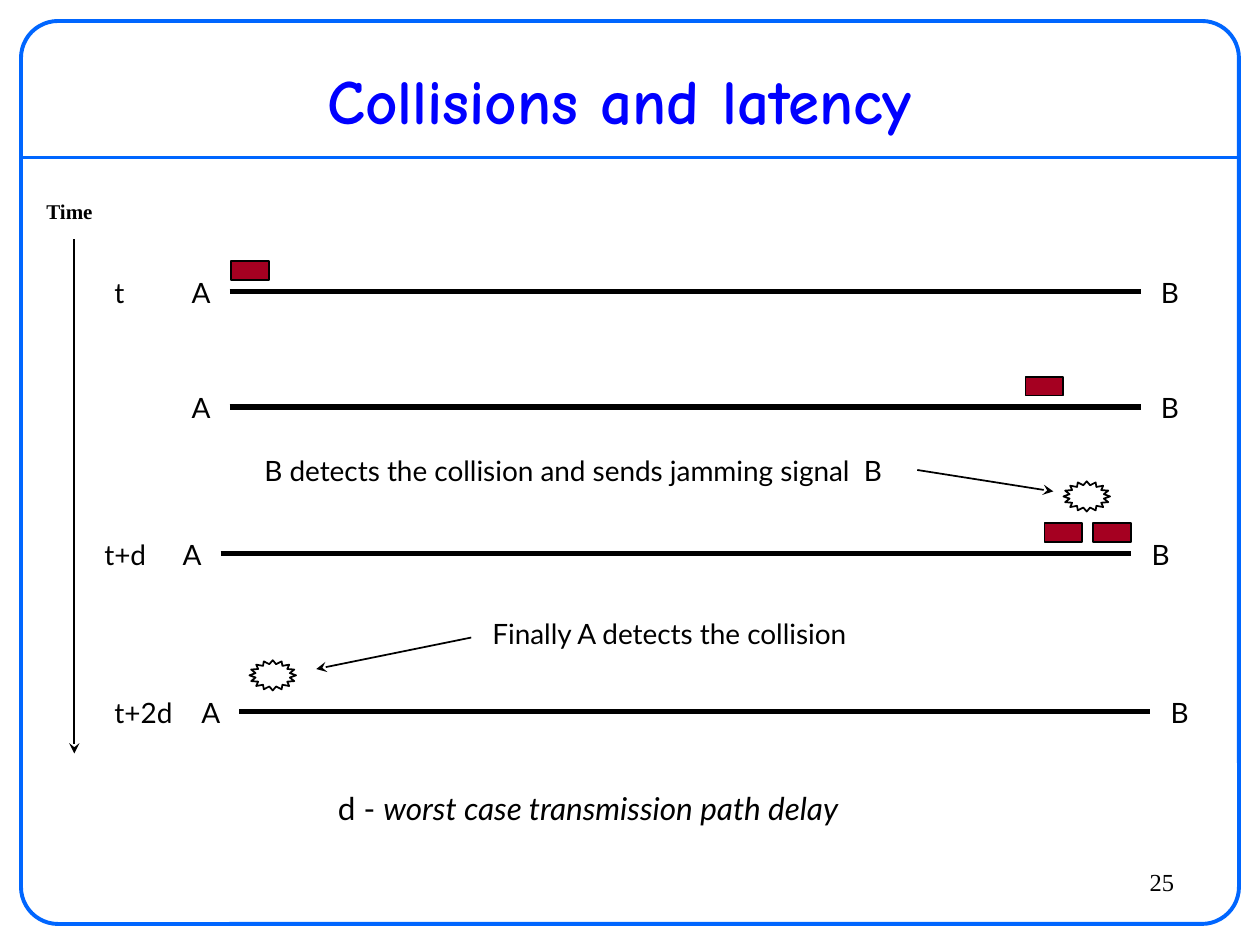
"""Build the slide on collisions and latency over a shared line."""
import pptx
import pptx.dml.color
import pptx.enum.shapes
import pptx.enum.text
import pptx.util
import lxml.etree

BLACK = pptx.dml.color.RGBColor(0x00, 0x00, 0x00)
BLUE = pptx.dml.color.RGBColor(0x00, 0x00, 0xFF)
SKY = pptx.dml.color.RGBColor(0x00, 0x66, 0xFF)
RED = pptx.dml.color.RGBColor(0xA5, 0x00, 0x21)
KIND = pptx.enum.shapes.MSO_SHAPE
ALIGN = pptx.enum.text.PP_ALIGN
MIDDLE = pptx.enum.text.MSO_ANCHOR.MIDDLE
GROW = pptx.enum.text.MSO_AUTO_SIZE.SHAPE_TO_FIT_TEXT

deck = pptx.Presentation()
deck.slide_width = pptx.util.Inches(10)
deck.slide_height = pptx.util.Inches(7.5)
COL = deck.slide_width / 120
ROW = deck.slide_height / 90
page = deck.slides.add_slide(deck.slide_layouts[6])

BODY = {"name": "Lato", "size": pptx.util.Pt(16)}
LABEL = {"word_wrap": False, "auto_size": GROW}
NOTE = {"word_wrap": True, "auto_size": GROW}
PLAIN = {"word_wrap": True}


def write(home, spot, parts, font=BODY, frame=LABEL, para={"line_spacing": 0.9}, ink=BLACK):
    left, top, wide, high = spot
    box = home.add_textbox(int(left * COL), int(top * ROW), int(wide * COL), int(high * ROW))
    for key, value in frame.items():
        setattr(box.text_frame, key, value)
    first = box.text_frame.paragraphs[0]
    for key, value in para.items():
        setattr(first, key, value)
    for words, extra in parts:
        run = first.add_run()
        run.text = words
        run.font.color.rgb = ink
        for key, value in {**font, **extra}.items():
            setattr(run.font, key, value)


def draw(home, start, end, ink=BLACK, width=1, tip=False):
    line = home.add_connector(
        pptx.enum.shapes.MSO_CONNECTOR.STRAIGHT,
        int(start[0] * COL), int(start[1] * ROW), int(end[0] * COL), int(end[1] * ROW))
    line.line.color.rgb = ink
    line.line.width = pptx.util.Pt(width)
    if tip:
        mark = lxml.etree.SubElement(line.line._get_or_add_ln(), pptx.oxml.ns.qn("a:tailEnd"))
        mark.set("type", "stealth")
    lxml.etree.SubElement(line._element.spPr, pptx.oxml.ns.qn("a:effectLst"))


draw(page.shapes, (2, 15), (118, 15), SKY, 2.25)

FRAME = {"kind": KIND.ROUNDED_RECTANGLE, "size": (116, 86), "ink": SKY, "width": 2.25, "bend": 0.041}
PACKET = {"kind": KIND.RECTANGLE, "size": (3.6, 1.8), "ink": BLACK, "width": 1, "fill": RED}
CRASH = {"kind": KIND.STAR_16_POINT, "size": (4.44, 2.88), "ink": BLACK, "width": 1, "bend": 0.375}
for form, left, top in [
    (FRAME, 2, 2),
    (PACKET, 22, 24.84),
    (PACKET, 97.68, 35.88),
    (PACKET, 99.48, 49.8),
    (PACKET, 104.1, 49.8),
    (CRASH, 101.28, 45.84),
    (CRASH, 23.76, 62.88),
]:
    wide, high = form["size"]
    shape = page.shapes.add_shape(
        form["kind"], int(left * COL), int(top * ROW), int(wide * COL), int(high * ROW))
    shape.shadow.inherit = False
    shape.line.color.rgb = form["ink"]
    shape.line.width = pptx.util.Pt(form["width"])
    if "bend" in form:
        shape.adjustments[0] = form["bend"]
    if "fill" in form:
        shape.fill.solid()
        shape.fill.fore_color.rgb = form["fill"]
    else:
        shape.fill.background()

write(page.shapes, (4, 5, 110, 9), [("Collisions and latency", {})],
      {"name": "Comic Neue", "size": pptx.util.Pt(36), "bold": True},
      {"word_wrap": True, "vertical_anchor": MIDDLE}, {"alignment": ALIGN.CENTER}, BLUE)
write(page.shapes, (101, 82, 12, 5), [("25", {})],
      {"name": "Times New Roman", "size": pptx.util.Pt(14)}, PLAIN, {"alignment": ALIGN.RIGHT})
write(page.shapes, (3.24, 18.6, 6.84, 3.36), [("Time", {})],
      {"name": "Times New Roman", "size": pptx.util.Pt(12), "bold": True})

for left, top, words, start, wide in [
    (21.88, 27.75, "t", 9.72, 3.36),
    (21.88, 38.75, "", 0, 0),
    (21, 52.75, "t+d", 8.76, 6.72),
    (22.8, 67.75, "t+2d", 9.72, 8.16),
]:
    bus = page.shapes.add_group_shape().shapes
    draw(bus, (left, top), (left + 86.75, top), width=3)
    for name, shift in [("A", -4.8), ("B", 87.5)]:
        write(bus, (left + shift, top - 1.75, 4, 4), [(name, {})])
    if words:
        write(page.shapes, (start, top - 1.75, wide, 4), [(words, {})])

for start, end in [
    ((7.08, 22.8), (7.08, 71.76)),
    ((87.36, 44.76), (100.32, 46.8)),
    ((44.88, 60.72), (30.12, 63.72)),
]:
    draw(page.shapes, start, end, tip=True)

for spot, parts, size in [
    ((24, 43, 65.64, 4), [("B detects the collision and sends jamming signal  B", {})], 16),
    ((45.72, 58.5, 42.36, 4), [("Finally A detects the collision", {})], 16),
    ((31, 75, 62.4, 4.44),
     [("d - ", {}), ("worst case transmission path delay", {"italic": True})], 18),
]:
    write(page.shapes, spot, parts, {**BODY, "size": pptx.util.Pt(size)}, NOTE)

deck.save("out.pptx")
